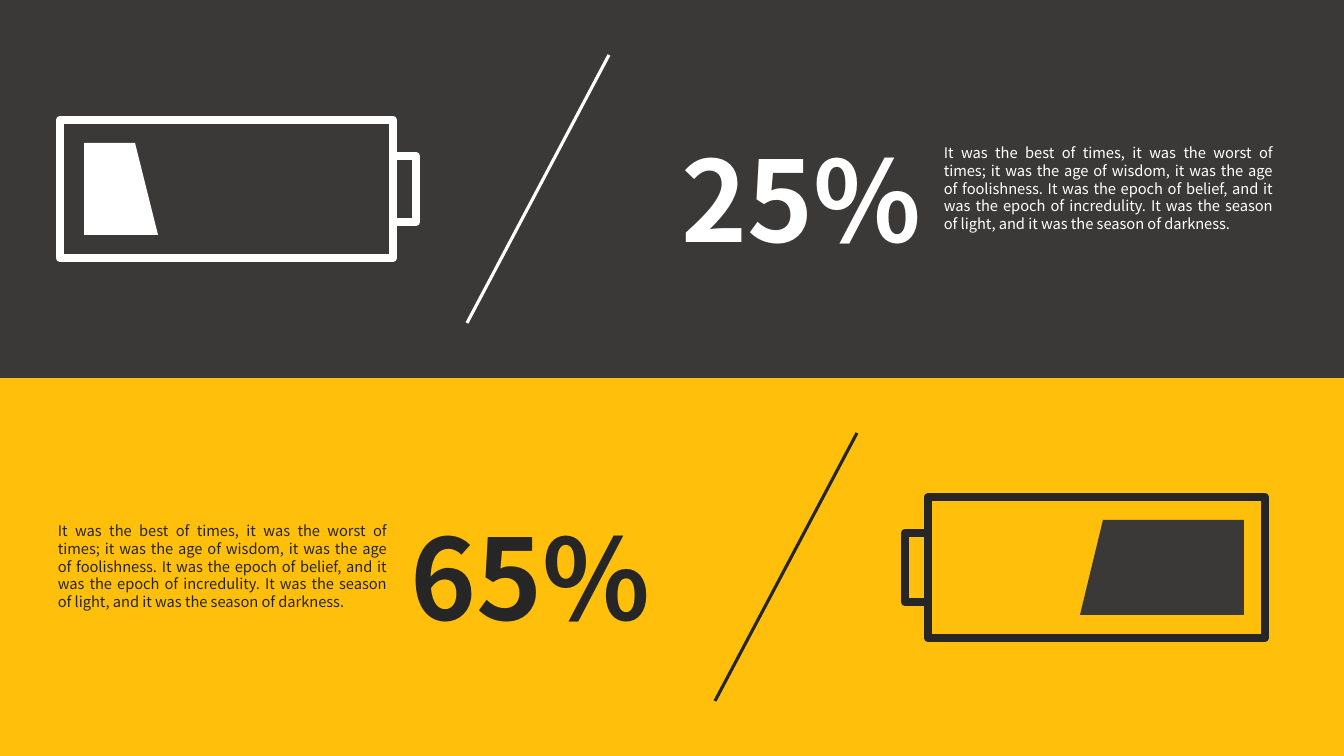
from lxml import etree
from pptx import Presentation
from pptx.dml.color import RGBColor
from pptx.enum.shapes import MSO_CONNECTOR, MSO_SHAPE
from pptx.enum.text import PP_ALIGN
from pptx.oxml.ns import qn
from pptx.util import Pt

PX = 914400 / 100.8
RECTANGLE = MSO_SHAPE.RECTANGLE
STRAIGHT = MSO_CONNECTOR.STRAIGHT
CENTER, JUSTIFY = PP_ALIGN.CENTER, PP_ALIGN.JUSTIFY

FONT = "Noto Sans CJK SC"
COLORS = {"charcoal": "3B3838", "amber": "FFBF0B", "white": "FFFFFF", "ink": "262626"}
STORY = (
    "It was the best of times, it was the worst of times; it was the age of wisdom, "
    "it was the age of foolishness. It was the epoch of belief, and it was the epoch "
    "of incredulity. It was the season of light, and it was the season of darkness."
)
WIDTH, BAND_HEIGHT = 1344, 378


def px(length):
    return round(length * PX)


def color(name):
    return RGBColor.from_string(COLORS[name])


def style(shape, fill=None, line=None):
    shape.shadow.inherit = False
    if fill:
        shape.fill.solid()
        shape.fill.fore_color.rgb = color(fill)
    else:
        shape.fill.background()
    if line:
        shape.line.color.rgb = color(line)
        shape.line.width = Pt(6)
    else:
        shape.line.fill.background()


def add_rectangle(slide, box, **look):
    rectangle = slide.shapes.add_shape(RECTANGLE, *map(px, box))
    style(rectangle, **look)


def add_outline(slide, points, closed, **look):
    builder = slide.shapes.build_freeform(*points[0], scale=PX)
    builder.add_line_segments(points[1:], close=closed)
    style(builder.convert_to_shape(), **look)


def add_battery(slide, box, mirrored, line, fill, inset, charge):
    """Battery body in box; inset and charge run from the end without terminal."""
    left, top, width, height = box
    bottom = top + height

    def along(distance):
        return left + width - distance if mirrored else left + distance

    add_rectangle(slide, box, line=line)

    # Terminal
    root, tip = along(width), along(width + 23)
    upper, lower = top + 36, bottom - 36
    add_outline(slide, [(root, upper), (tip, upper), (tip, lower), (root, lower)],
                closed=False, line=line)

    # Charge level with its slanted edge
    upper, lower = top + 23, bottom - 23
    start, end = along(inset), along(inset + charge)
    slant = along(inset + charge - 23)
    add_outline(slide, [(end, lower), (start, lower), (start, upper), (slant, upper)],
                closed=True, fill=fill)


def add_slash(slide, left, top, ink):
    slash = slide.shapes.add_connector(
        STRAIGHT, px(left + 142), px(top), px(left), px(top + 268))
    slash.line.color.rgb = color(ink)
    slash.line.width = Pt(2.25)
    etree.SubElement(slash._element.spPr, qn("a:effectLst"))


def add_text(slide, box, text, size, spacing, align, ink, bold=False):
    frame = slide.shapes.add_textbox(*map(px, box)).text_frame
    frame.word_wrap = True
    paragraph = frame.paragraphs[0]
    paragraph.alignment = align
    paragraph.line_spacing = Pt(spacing)
    run = paragraph.add_run()
    run.text = text
    run.font.name = FONT
    run.font.size = Pt(size)
    run.font.bold = bold
    run.font.color.rgb = color(ink)


def add_band(slide, top, background, ink, battery, slash_left, percent, percent_left,
             story_left):
    add_rectangle(slide, (0, top, WIDTH, BAND_HEIGHT), fill=background)

    # Battery
    left, offset, width, height = battery["box"]
    add_battery(slide, (left, top + offset, width, height), battery["mirrored"], ink,
                battery["fill"], battery["inset"], battery["charge"])

    add_slash(slide, slash_left, top + 55, ink)

    # Percentage and story
    add_text(slide, (percent_left, top + 116, 285, 146), percent, 80, 103, CENTER, ink,
             bold=True)
    add_text(slide, (story_left, top + 139, 349, 99), STORY, 10.5, 12.6, JUSTIFY, ink)


def main():
    prs = Presentation()
    prs.slide_width, prs.slide_height = px(WIDTH), px(2 * BAND_HEIGHT)
    slide = prs.slides.add_slide(prs.slide_layouts[6])

    low_battery = {"box": (60, 120, 333, 138), "mirrored": False, "fill": "white",
                   "inset": 24, "charge": 74}
    high_battery = {"box": (928, 119, 337, 141), "mirrored": True, "fill": "charcoal",
                    "inset": 21, "charge": 164}
    add_band(slide, 0, "charcoal", "white", low_battery, 467, "25%", 659, 934)
    add_band(slide, BAND_HEIGHT, "amber", "ink", high_battery, 715, "65%", 388, 48)

    prs.save("out.pptx")


if __name__ == "__main__":
    main()
